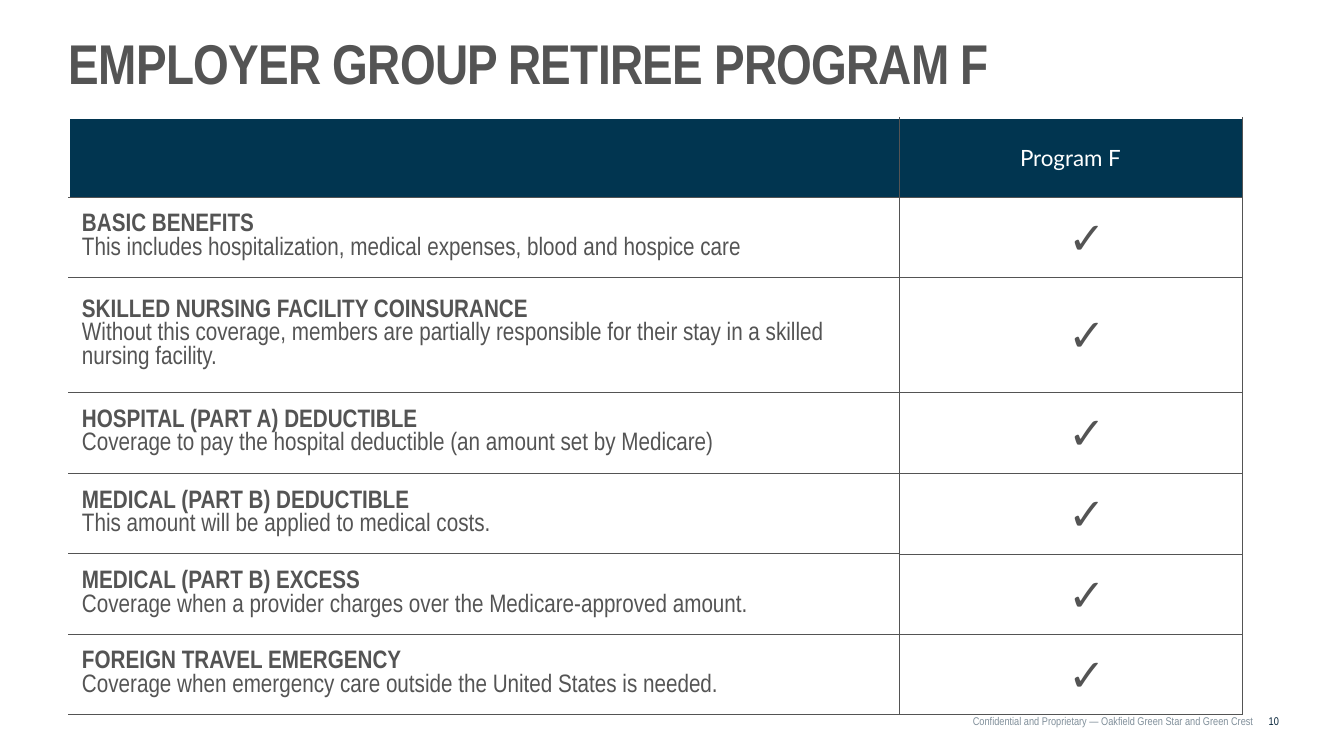
"""Build the Program F benefits table slide."""
from lxml import etree
from pptx import Presentation
from pptx.dml.color import RGBColor
from pptx.enum.text import MSO_ANCHOR, PP_ALIGN
from pptx.oxml.ns import qn
from pptx.util import Emu, Pt

LEFT, CENTER, RIGHT = PP_ALIGN.LEFT, PP_ALIGN.CENTER, PP_ALIGN.RIGHT
MIDDLE = MSO_ANCHOR.MIDDLE
GREY, NAVY, WHITE = "545454", "013550", "FFFFFF"
NARROW, LATO = "Arial Narrow", "Lato"


def px(length):
    return Emu(round(length * 914400 / 100.8))


def write(paragraph, text, align, color, **font):
    paragraph.alignment = align
    run = paragraph.add_run()
    run.text = text
    run.font.color.rgb = RGBColor.from_string(color)
    for key, value in font.items():
        setattr(run.font, key, value)
    return run


prs = Presentation()
prs.slide_width, prs.slide_height = px(1344), px(756)
slide = prs.slides.add_slide(prs.slide_layouts[6])

labels = [
    ((824, 714, 430, 40), "Confidential and Proprietary — Oakfield Green Star and Green Crest",
     RIGHT, "808F9A", 8, False),
    ((1232, 714, 47, 40), "10", RIGHT, "011F35", 8, False),
    ((69, 40, 1200, 105), "EMPLOYER GROUP RETIREE PROGRAM F", LEFT, GREY, 40, True),
]
for box, text, align, color, size, bold in labels:
    frame = slide.shapes.add_textbox(*map(px, box)).text_frame
    frame.word_wrap = True
    for side in ("left", "right", "top", "bottom"):
        setattr(frame, f"margin_{side}", 0)
    label = write(frame.paragraphs[0], text, align, color, name=NARROW, size=Pt(size), bold=bold)
    if bold:
        frame.paragraphs[0].line_spacing = Pt(40)
        label.font._element.set("spc", "-50")

benefits = [
    ("BASIC BENEFITS",
     "This includes hospitalization, medical expenses, blood and hospice care"),
    ("SKILLED NURSING FACILITY COINSURANCE",
     "Without this coverage, members are partially responsible for their stay in a skilled "
     "nursing facility."),
    ("HOSPITAL (PART A) DEDUCTIBLE",
     "Coverage to pay the hospital deductible (an amount set by Medicare)"),
    ("MEDICAL (PART B) DEDUCTIBLE", "This amount will be applied to medical costs."),
    ("MEDICAL (PART B) EXCESS",
     "Coverage when a provider charges over the Medicare-approved amount."),
    ("FOREIGN TRAVEL EMERGENCY",
     "Coverage when emergency care outside the United States is needed."),
]
row_heights = [79, 80, 115, 81, 81, 80, 81]
column_widths = [830, 343]
table = slide.shapes.add_table(
    len(row_heights), len(column_widths), px(69), px(118),
    px(sum(column_widths)), px(sum(row_heights))).table
table.first_row = table.horz_banding = False
for row, height in zip(table.rows, row_heights):
    row.height = px(height)
for column, width in zip(table.columns, column_widths):
    column.width = px(width)

header = table.cell(0, 1).text_frame.paragraphs[0]
write(header, "Program F", CENTER, WHITE, name=LATO, size=Pt(16), bold=False)
for number, (benefit, detail) in enumerate(benefits, start=1):
    description = table.cell(number, 0).text_frame
    write(description.paragraphs[0], benefit, LEFT, GREY, name=NARROW, size=Pt(18), bold=True)
    write(description.add_paragraph(), detail, LEFT, GREY, name=NARROW, size=Pt(18), bold=False)
    check = table.cell(number, 1).text_frame.paragraphs[0]
    write(check, "✓", CENTER, GREY, name=LATO, size=Pt(32), bold=False)

for r in range(len(row_heights)):
    for c in range(len(column_widths)):
        cell = table.cell(r, c)
        cell.vertical_anchor = MIDDLE
        cell.margin_left = px(46 if r and c else 13)
        cell.margin_right = px(13)
        cell.margin_top = cell.margin_bottom = px(5)
        borders = {
            "L": (GREY, 0.5) if c else (WHITE, 1),
            "R": (GREY, 0.5),
            "T": (GREY, 1 if (r, c) == (5, 0) else 0.5) if r else (WHITE, 1),
            "B": (GREY, 1 if r == 6 or (r, c) == (4, 0) else 0.5),
        }
        properties = cell._tc.get_or_add_tcPr()
        for side, (color, weight) in borders.items():
            line = etree.SubElement(properties, qn(f"a:ln{side}"), w=str(Pt(weight)))
            paint = etree.SubElement(line, qn("a:solidFill"))
            etree.SubElement(paint, qn("a:srgbClr"), val=color)
        if r:
            cell.fill.background()
        else:
            cell.fill.solid()
            cell.fill.fore_color.rgb = RGBColor.from_string(NAVY)

prs.save("out.pptx")
